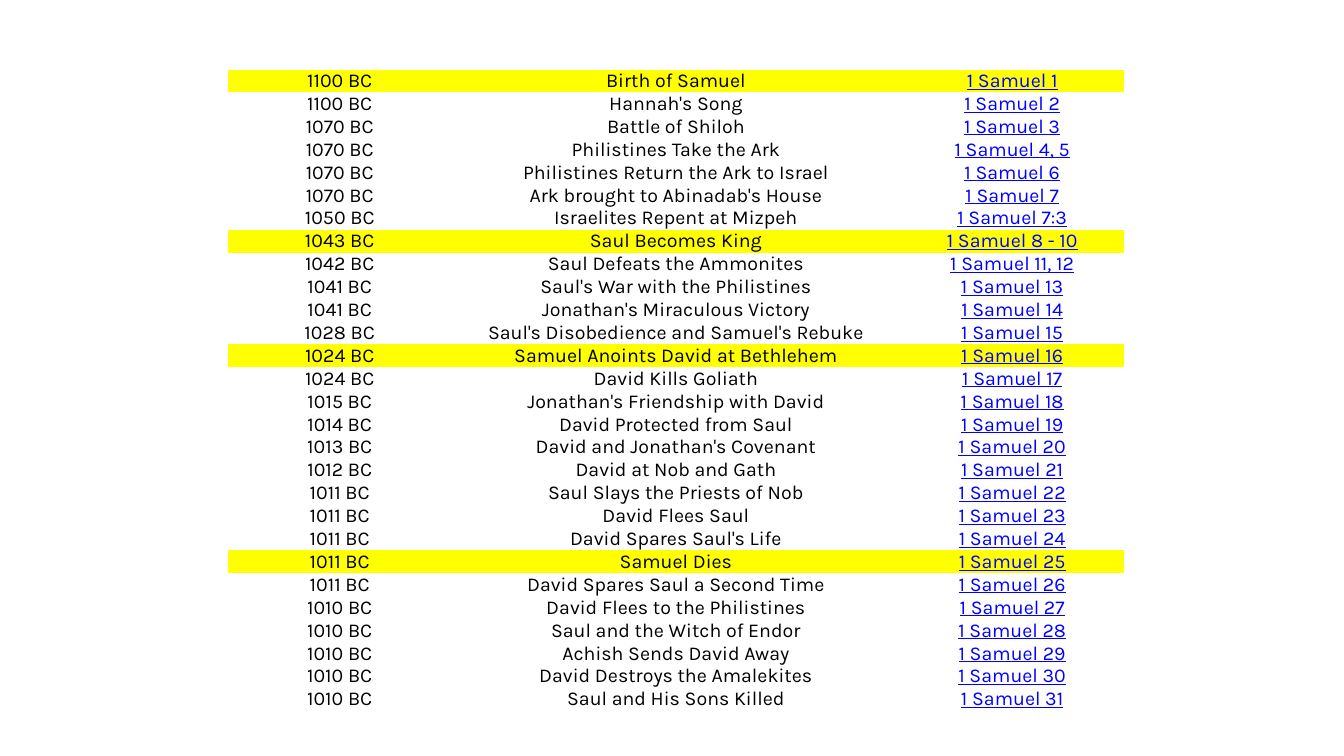
import pptx
import pptx.dml.color
import pptx.enum.text
import pptx.util
from dataclasses import dataclass

Inches = pptx.util.Inches

COLORS = {"text": "000000", "reference": "0000FF", "highlight": "FFFF00"}
FONT = "Karla"
NO_STYLE = "{2D5ABB26-0587-4C30-8999-92F81FD0307C}"
COLUMN_WIDTHS = (2.22, 4.45, 2.22)
ROW_HEIGHT = 0.22


@dataclass
class Event:
    year: int
    title: str
    chapters: str
    highlighted: bool = False


EVENTS = [
    Event(1100, "Birth of Samuel", "1", True),
    Event(1100, "Hannah's Song", "2"),
    Event(1070, "Battle of Shiloh", "3"),
    Event(1070, "Philistines Take the Ark", "4, 5"),
    Event(1070, "Philistines Return the Ark to Israel", "6"),
    Event(1070, "Ark brought to Abinadab's House", "7"),
    Event(1050, "Israelites Repent at Mizpeh", "7:3"),
    Event(1043, "Saul Becomes King", "8 - 10", True),
    Event(1042, "Saul Defeats the Ammonites", "11, 12"),
    Event(1041, "Saul's War with the Philistines", "13"),
    Event(1041, "Jonathan's Miraculous Victory", "14"),
    Event(1028, "Saul's Disobedience and Samuel's Rebuke", "15"),
    Event(1024, "Samuel Anoints David at Bethlehem", "16", True),
    Event(1024, "David Kills Goliath", "17"),
    Event(1015, "Jonathan's Friendship with David", "18"),
    Event(1014, "David Protected from Saul", "19"),
    Event(1013, "David and Jonathan's Covenant", "20"),
    Event(1012, "David at Nob and Gath", "21"),
    Event(1011, "Saul Slays the Priests of Nob", "22"),
    Event(1011, "David Flees Saul", "23"),
    Event(1011, "David Spares Saul's Life", "24"),
    Event(1011, "Samuel Dies", "25", True),
    Event(1011, "David Spares Saul a Second Time", "26"),
    Event(1010, "David Flees to the Philistines", "27"),
    Event(1010, "Saul and the Witch of Endor", "28"),
    Event(1010, "Achish Sends David Away", "29"),
    Event(1010, "David Destroys the Amalekites", "30"),
    Event(1010, "Saul and His Sons Killed", "31"),
]


def rgb(name: str) -> pptx.dml.color.RGBColor:
    return pptx.dml.color.RGBColor.from_string(COLORS[name])


def fill_cell(cell, text: str, color: str, highlighted: bool) -> None:
    cell.margin_left = cell.margin_right = Inches(0)
    cell.margin_top = cell.margin_bottom = Inches(0)
    if highlighted:
        cell.fill.solid()
        cell.fill.fore_color.rgb = rgb("highlight")
    else:
        cell.fill.background()
    p = cell.text_frame.paragraphs[0]
    p.text = text
    p.alignment = pptx.enum.text.PP_ALIGN.CENTER
    font = p.runs[0].font
    font.name = FONT
    font.size = pptx.util.Pt(14)
    font.color.rgb = rgb(color)
    font.underline = color == "reference"


def add_timeline(slide, events: list[Event]) -> None:
    s = slide.shapes.add_table(len(events), len(COLUMN_WIDTHS), Inches(2.26), Inches(0.69),
                               Inches(sum(COLUMN_WIDTHS)), Inches(ROW_HEIGHT * len(events)))
    table = s.table
    # Plain table without banding or borders
    table.first_row = table.horz_banding = False
    s._element.xpath(".//a:tableStyleId")[0].text = NO_STYLE
    for column, width in zip(table.columns, COLUMN_WIDTHS):
        column.width = Inches(width)
    # One row per event
    for row, event in zip(table.rows, events):
        row.height = Inches(ROW_HEIGHT)
        year, title, reference = row.cells
        fill_cell(year, f"{event.year} BC", "text", event.highlighted)
        fill_cell(title, event.title, "text", event.highlighted)
        fill_cell(reference, f"1 Samuel {event.chapters}", "reference", event.highlighted)


def main() -> None:
    prs = pptx.Presentation()
    prs.slide_width, prs.slide_height = Inches(13.33), Inches(7.5)
    slide = prs.slides.add_slide(prs.slide_layouts[6])
    add_timeline(slide, EVENTS)
    prs.save("out.pptx")


if __name__ == "__main__":
    main()
